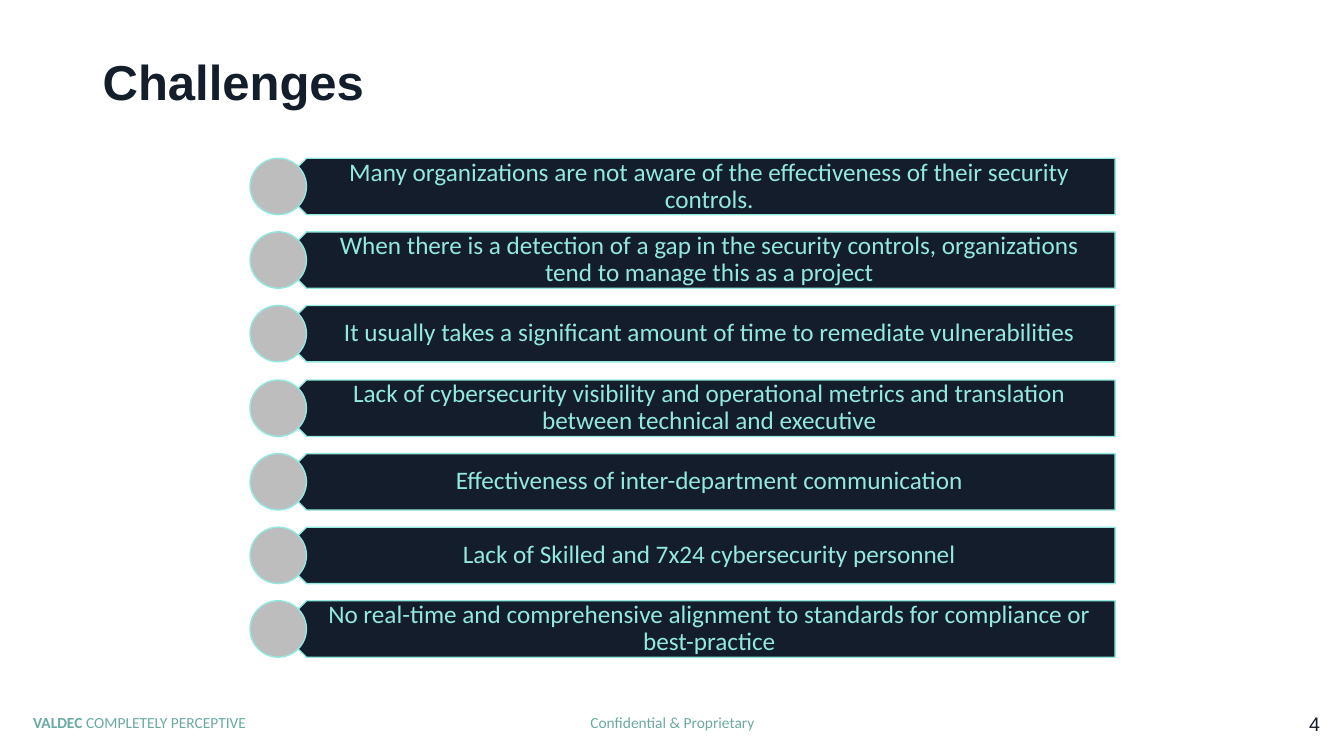
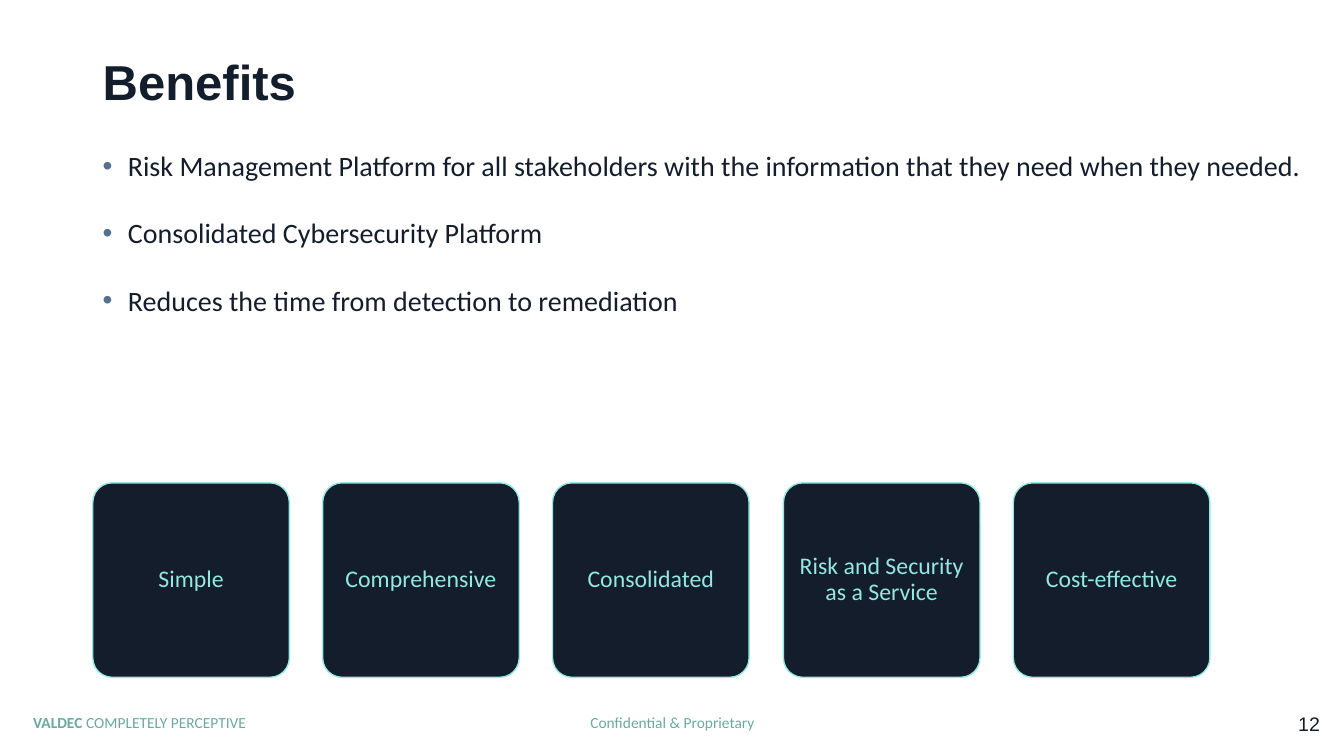
from lxml.etree import SubElement
from pptx import Presentation
from pptx.dml.color import RGBColor
from pptx.enum.shapes import MSO_SHAPE as Preset
from pptx.enum.text import MSO_ANCHOR as Anchor, PP_ALIGN as Align
from pptx.oxml.ns import qn
from pptx.util import Emu, Pt

NAVY, MINT, TEAL = "131D2B", "93E8DF", "6BA9A3"
GREY, SLATE = "BDBDBE", "55718D"

CHALLENGES = [
    "Many organizations are not aware of the effectiveness of their security controls.",
    "When there is a detection of a gap in the security controls, organizations "
    "tend to manage this as a project",
    "It usually takes a significant amount of time to remediate vulnerabilities",
    "Lack of cybersecurity visibility and operational metrics and translation "
    "between technical and executive",
    "Effectiveness of inter-department communication",
    "Lack of Skilled and 7x24 cybersecurity personnel",
    "No real-time and comprehensive alignment to standards for compliance or best-practice",
]
BENEFITS = [
    "Risk Management Platform for all stakeholders with the information "
    "that they need when they needed.",
    "Consolidated Cybersecurity Platform",
    "Reduces the time from detection to remediation",
]
QUALITIES = [
    "Simple",
    "Comprehensive",
    "Consolidated",
    "Risk and Security as a Service",
    "Cost-effective",
]


def px(length):
    """Turn px, at 100 to the inch, into EMU."""
    return Emu(length * 9144)


def color(code):
    """Turn a hex string into a colour."""
    return RGBColor.from_string(code)


def spread(first, last, items):
    """Pair each item with its evenly spaced position from first to last."""
    gaps = len(items) - 1
    return [(first + round(i * (last - first) / gaps), item) for i, item in enumerate(items)]


class Deck:
    """Holds the style and the slide being built."""

    def __init__(self):
        """Start an empty widescreen presentation."""
        self.prs = Presentation()
        self.prs.slide_width, self.prs.slide_height = px(1333), px(750)
        self.slide = None

    def new_slide(self, title, number):
        """Add a slide with its title, footers and number."""
        self.slide = self.prs.slides.add_slide(self.prs.slide_layouts[6])
        self.text((565, 705, 204, 26), [("Confidential & Proprietary", False)],
                  11, TEAL, align=Align.CENTER)
        self.text((23, 705, 362, 26), [("VALDEC ", True), ("COMPLETELY PERCEPTIVE", False)],
                  11, TEAL)
        self.text((92, 53, 1150, 63), [(title, True)], 35, NAVY, "Arial", anchor=Anchor.MIDDLE)
        self.text((1242, 698, 77, 40), [(str(number), False)], 14, NAVY, "Arial",
                  Align.RIGHT, Anchor.MIDDLE, spacing=1.0)

    def add_runs(self, paragraph, runs, size, ink, font="Calibri", align=Align.LEFT, spacing=0.9):
        """Fill a paragraph with (wording, bold) runs."""
        paragraph.alignment, paragraph.line_spacing = align, spacing
        for wording, bold in runs:
            run = paragraph.add_run()
            run.text = wording
            run.font.name, run.font.size, run.font.bold = font, Pt(size), bold
            run.font.color.rgb = color(ink)

    def frame(self, holder, anchor, insets):
        """Set wrapping, anchor and insets, and return the text frame."""
        frame = holder.text_frame
        frame.word_wrap, frame.vertical_anchor = True, anchor
        (frame.margin_left, frame.margin_top,
         frame.margin_right, frame.margin_bottom) = map(px, insets)
        return frame

    def text(self, box, runs, size, ink, font="Calibri", align=Align.LEFT,
             anchor=Anchor.TOP, insets=(10, 5, 10, 5), spacing=0.9):
        """Add a text box of one paragraph."""
        holder = self.slide.shapes.add_textbox(*map(px, box))
        frame = self.frame(holder, anchor, insets)
        self.add_runs(frame.paragraphs[0], runs, size, ink, font, align, spacing)

    def bullets(self, box, points):
        """Add a bulleted list."""
        holder = self.slide.shapes.add_textbox(*map(px, box))
        frame = self.frame(holder, Anchor.TOP, (10, 5, 10, 5))
        for i, point in enumerate(points):
            paragraph = frame.add_paragraph() if i else frame.paragraphs[0]
            self.add_runs(paragraph, [(point, False)], 20, NAVY, spacing=1.5)
            paragraph.space_before = paragraph.space_after = Pt(6)
            props = paragraph._p.get_or_add_pPr()
            props.set("marL", str(px(25)))
            props.set("indent", str(px(-25)))
            tint = SubElement(props, qn("a:buClr"))
            SubElement(tint, qn("a:srgbClr"), val=SLATE)
            SubElement(props, qn("a:buFont"), typeface="Arial")
            SubElement(props, qn("a:buChar"), char="•")

    def shape(self, preset, box, fill):
        """Add a filled preset shape with the mint outline."""
        shape = self.slide.shapes.add_shape(preset, *map(px, box))
        shape.shadow.inherit = False
        shape.fill.solid()
        shape.fill.fore_color.rgb = color(fill)
        shape.line.color.rgb = color(MINT)
        shape.line.width = Pt(1)
        return shape

    def challenge(self, top, wording):
        """Add a left-pointing bar with its text and disc."""
        bar = self.shape(Preset.PENTAGON, (276, top, 830, 56), NAVY)
        bar.rotation = 180
        self.text((290, top, 816, 56), [(wording, False)], 18, MINT, align=Align.CENTER,
                  anchor=Anchor.MIDDLE, insets=(25, 7, 14, 7))
        self.shape(Preset.OVAL, (248, top, 56, 56), GREY)

    def card(self, left, wording):
        """Add a rounded card with centred text."""
        card = self.shape(Preset.ROUNDED_RECTANGLE, (left, 479, 195, 193), NAVY)
        card.adjustments[0] = 0.1
        frame = self.frame(card, Anchor.MIDDLE, (7, 7, 7, 7))
        self.add_runs(frame.paragraphs[0], [(wording, False)], 17, MINT, align=Align.CENTER)


def main():
    """Build and save both slides."""
    deck = Deck()
    deck.new_slide("Challenges", 4)
    for top, wording in spread(157, 596, CHALLENGES):
        deck.challenge(top, wording)

    deck.new_slide("Benefits", 12)
    deck.bullets((92, 126, 1213, 353), BENEFITS)
    for left, wording in spread(92, 1005, QUALITIES):
        deck.card(left, wording)
    deck.prs.save("out.pptx")


if __name__ == "__main__":
    main()
